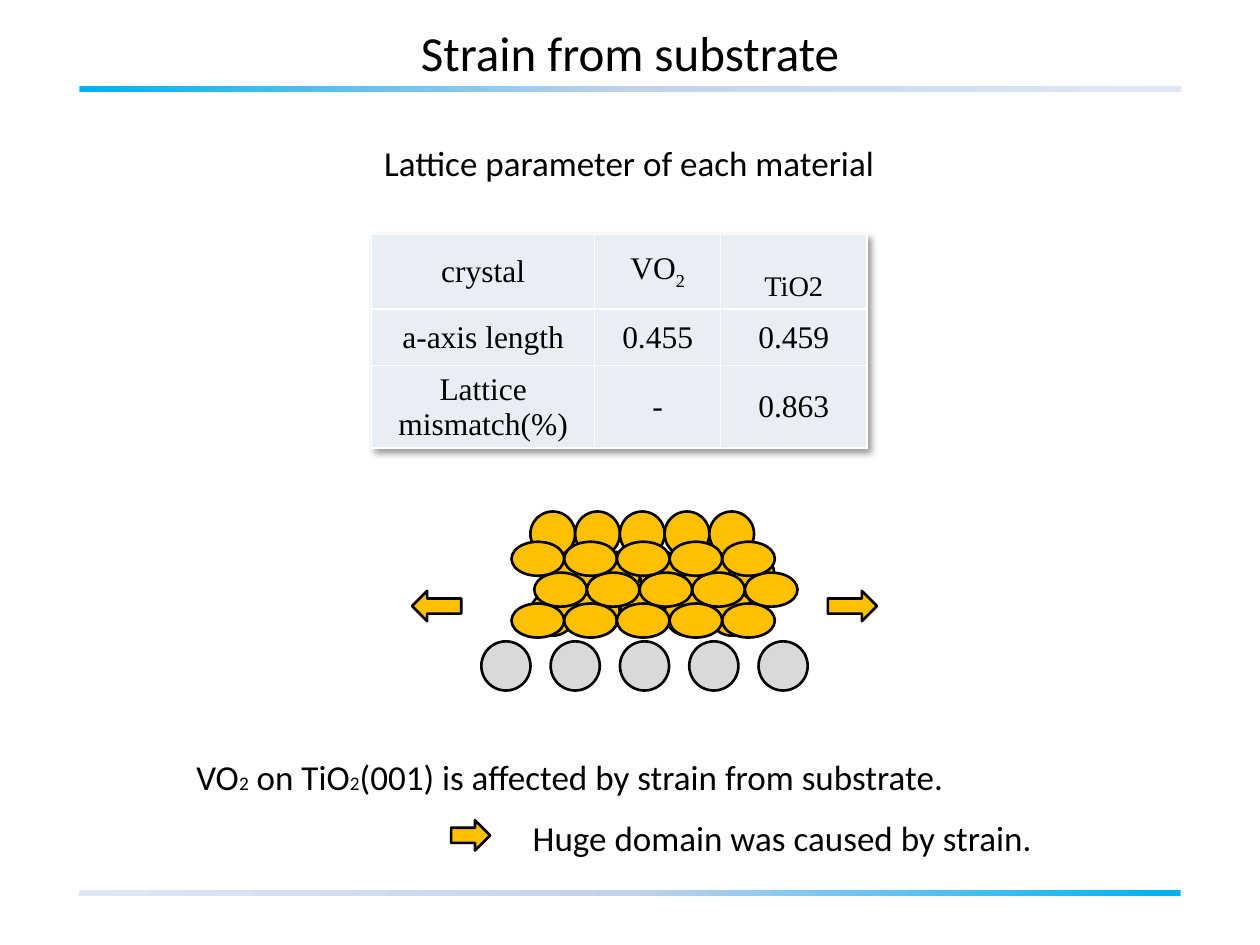
"""Build the slide on strain from the substrate, on a grid of 100 columns by 75 rows."""
import dataclasses
import typing

import lxml.etree
import pptx
import pptx.dml.color
import pptx.enum.shapes
import pptx.enum.text
import pptx.oxml.ns
import pptx.util

COLS, ROWS = 100, 75
WIDE, HIGH = pptx.util.Inches(10), pptx.util.Inches(7.5)
SANS, SERIF = "Calibri", "Times New Roman"
BLACK, WHITE, GOLD, GRAY, PALE = "000000", "FFFFFF", "FFC000", "D9D9D9", "E9EDF4"
FADE = ((0, "00B0F0"), (50, "C2D1ED"), (100, "E1E8F5"))
KIND = pptx.enum.shapes.MSO_SHAPE
ALIGN = pptx.enum.text.PP_ALIGN
qn = pptx.oxml.ns.qn


class Box(typing.NamedTuple):
    """Left, top, width and height in grid columns and rows."""
    x: float
    y: float
    w: float
    h: float


class Run(typing.NamedTuple):
    """Words with a size of their own and a baseline shift in percent."""
    text: str
    size: float
    base: int = 0


@dataclasses.dataclass
class Note:
    """A text box made of one line."""
    box: Box
    runs: list[Run]
    wrap: bool = False


@dataclasses.dataclass
class Layer:
    """Rows of equal atoms: one (left, top) start per row."""
    starts: list[tuple[float, float]]
    step: float
    size: tuple[float, float]
    fill: str
    count: int = 5


@dataclasses.dataclass
class Arrow:
    """A block arrow."""
    kind: typing.Any
    box: Box


NOTES = [
    Note(Box(0, 1.3, 100, 5.7), [Run("Strain from substrate", 28)], True),
    Note(Box(29.5, 10.7, 41.4, 4.4), [Run("Lattice parameter of each material", 20)]),
    Note(Box(14.6, 59.5, 63.2, 4.4), [
        Run("VO", 20), Run("2", 11), Run(" on TiO", 20), Run("2", 11),
        Run("(001) is affected by strain from substrate.", 20)]),
    Note(Box(41.3, 64.3, 42, 4.4), [Run("Huge domain was caused by strain.", 20)]),
]
BARS = [(6.8, 0), (70.6, 180)]
LAYERS = [
    Layer([(38.2, 50.9)], 5.5, (3.9, 3.9), GRAY),
    Layer([(42.1, 46.9), (43.7, 43.8), (42.1, 40.6)], 3.55, (3.55, 3.55), GOLD),
    Layer([(40.6, 47.9), (42.4, 45.45), (40.6, 43)], 4.18, (4.18, 2.7), GOLD),
]
ARROWS = [
    Arrow(KIND.RIGHT_ARROW, Box(65.7, 46.9, 3.9, 2.4)),
    Arrow(KIND.LEFT_ARROW, Box(32.7, 46.9, 3.9, 2.4)),
    Arrow(KIND.RIGHT_ARROW, Box(35.8, 65.1, 3.1, 2.4)),
]
WIDTHS, HEIGHTS = (17.7, 10, 11.6), (3.8, 4.5, 5.8)
CELLS = [
    [[Run("crystal", 18)], [Run("VO", 18), Run("2", 18, -25)], [Run("TiO2", 28, -25)]],
    [[Run("a-axis length", 18)], [Run("0.455", 18)], [Run("0.459", 18)]],
    [[Run("Lattice mismatch(%)", 18)], [Run("-", 18)], [Run("0.863", 18)]],
]


def span(cols: float) -> int:
    """Turn grid columns into a length."""
    return round(WIDE * cols / COLS)


def drop(rows: float) -> int:
    """Turn grid rows into a length."""
    return round(HIGH * rows / ROWS)


def place(box: Box) -> tuple[int, int, int, int]:
    """Turn a box into slide lengths."""
    return span(box.x), drop(box.y), span(box.w), drop(box.h)


def tint(code: str) -> pptx.dml.color.RGBColor:
    """Turn a hex string into a colour."""
    return pptx.dml.color.RGBColor.from_string(code)


def node(root: typing.Any, tag: str, **attrs: typing.Any) -> typing.Any:
    """Add a drawing element with its attributes."""
    return lxml.etree.SubElement(root, qn(tag), {k: str(v) for k, v in attrs.items()})


def write(frame: typing.Any, runs: list[Run], face: str, align: typing.Any) -> None:
    """Fill the first paragraph of a frame with runs."""
    para = frame.paragraphs[0]
    para.alignment = align
    para.font.name = face
    para.font.color.rgb = tint(BLACK)
    sizes = {run.size for run in runs}
    if len(sizes) == 1:
        para.font.size = pptx.util.Pt(runs[0].size)
    for item in runs:
        run = para.add_run()
        run.text = item.text
        if len(sizes) > 1:
            run.font.size = pptx.util.Pt(item.size)
        if item.base:
            run.font._element.set("baseline", str(item.base * 1000))


def label(shapes: typing.Any, note: Note) -> None:
    """Draw a text box."""
    frame = shapes.add_textbox(*place(note.box)).text_frame
    frame.word_wrap = note.wrap
    frame.auto_size = pptx.enum.text.MSO_AUTO_SIZE.SHAPE_TO_FIT_TEXT
    write(frame, note.runs, SANS, ALIGN.CENTER if note.wrap else ALIGN.LEFT)


def solid(shapes: typing.Any, kind: typing.Any, box: Box, fill: str) -> None:
    """Draw a filled shape with a black outline."""
    shape = shapes.add_shape(kind, *place(box))
    shape.shadow.inherit = False
    shape.fill.solid()
    shape.fill.fore_color.rgb = tint(fill)
    shape.line.color.rgb = tint(BLACK)
    shape.line.width = pptx.util.Pt(1.5)


def fade(shapes: typing.Any, top: float, angle: int) -> None:
    """Draw a bar that fades along its length."""
    bar = shapes.add_shape(KIND.RECTANGLE, *place(Box(6.3, top, 87.4, 0.5)))
    bar.shadow.inherit = False
    bar.line.fill.background()
    bar.fill.gradient()
    bar.fill.gradient_angle = angle
    stops = bar._element.spPr.find(".//" + qn("a:gsLst"))
    stops.clear()
    for pos, code in FADE:
        node(node(stops, "a:gs", pos=pos * 1000), "a:srgbClr", val=code)


def stack(shapes: typing.Any, layer: Layer) -> None:
    """Draw the atoms of a layer as one group."""
    group = shapes.add_group_shape().shapes
    for left, top in layer.starts:
        for col in range(layer.count):
            solid(group, KIND.OVAL, Box(left + col * layer.step, top, *layer.size), layer.fill)


def style(cell: typing.Any) -> None:
    """Give a cell its margins, white borders and pale fill."""
    cell.vertical_anchor = pptx.enum.text.MSO_ANCHOR.MIDDLE
    cell.margin_left = cell.margin_right = span(0.6)
    cell.margin_top = cell.margin_bottom = drop(0.5)
    for side in ("a:lnL", "a:lnR", "a:lnT", "a:lnB"):
        edge = node(cell._tc.get_or_add_tcPr(), side, w=pptx.util.Pt(1))
        node(node(edge, "a:solidFill"), "a:srgbClr", val=WHITE)
    cell.fill.solid()
    cell.fill.fore_color.rgb = tint(PALE)


def grid(shapes: typing.Any) -> None:
    """Draw the lattice table with its shadow."""
    box = Box(29.5, 18.6, sum(WIDTHS), sum(HEIGHTS))
    table = shapes.add_table(len(CELLS), len(WIDTHS), *place(box)).table
    table.first_row = table.horz_banding = False
    for col, wide in zip(table.columns, WIDTHS):
        col.width = span(wide)
    for row, high, line in zip(table.rows, HEIGHTS, CELLS):
        row.height = drop(high)
        for cell, runs in zip(row.cells, line):
            style(cell)
            write(cell.text_frame, runs, SERIF, ALIGN.CENTER)
    props = table._tbl.tblPr
    glow = node(props, "a:effectLst")
    props.insert(0, glow)
    cast = node(glow, "a:outerShdw", blurRad=50800, dist=38100, dir=2700000, algn="tl")
    node(node(cast, "a:srgbClr", val=BLACK), "a:alpha", val=40000)


def main() -> None:
    """Build and save the slide."""
    deck = pptx.Presentation()
    deck.slide_width, deck.slide_height = WIDE, HIGH
    shapes = deck.slides.add_slide(deck.slide_layouts[6]).shapes
    for top, angle in BARS:
        fade(shapes, top, angle)
    grid(shapes)
    for layer in LAYERS:
        stack(shapes, layer)
    for arrow in ARROWS:
        solid(shapes, arrow.kind, arrow.box, GOLD)
    for note in NOTES:
        label(shapes, note)
    deck.save("out.pptx")


if __name__ == "__main__":
    main()
